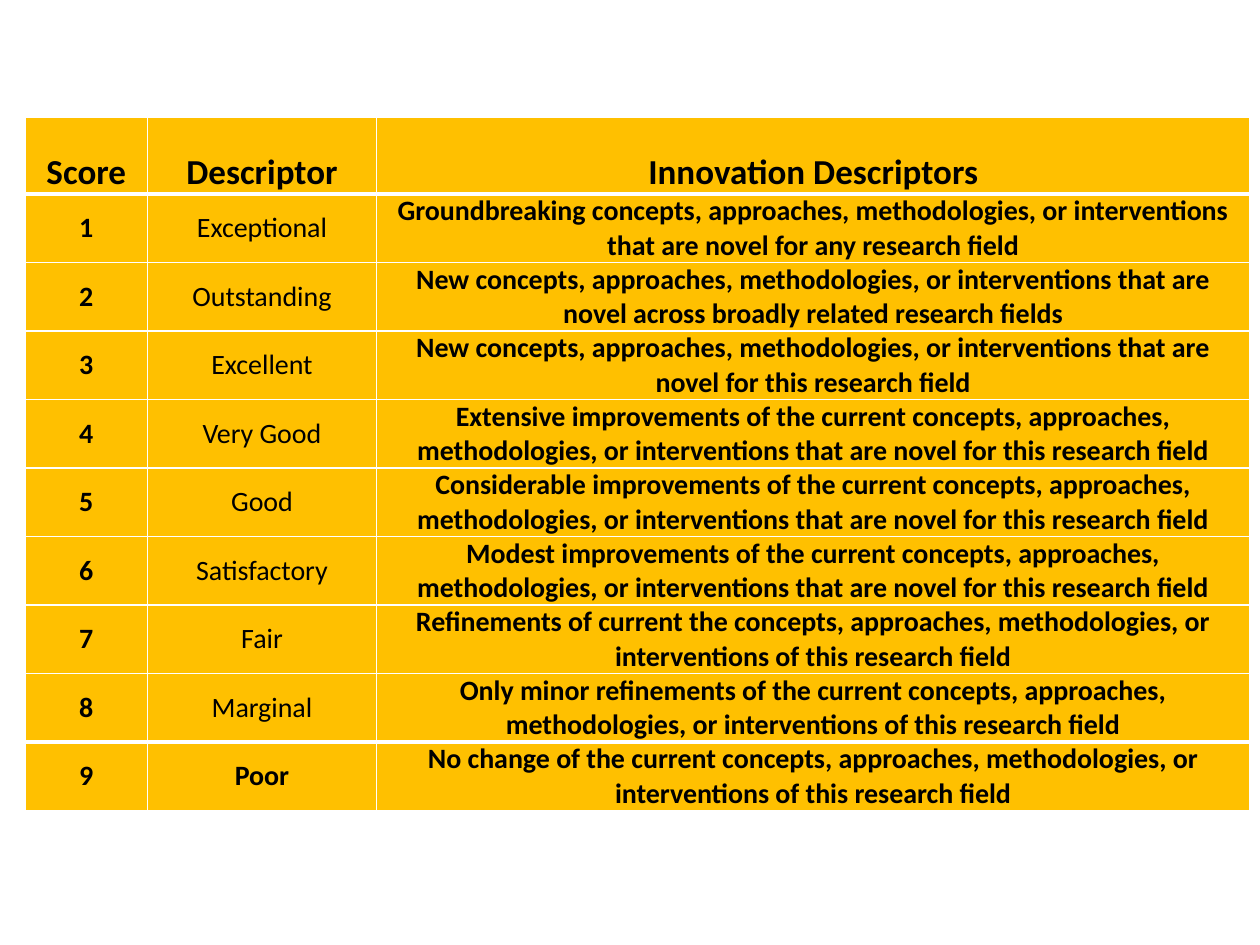
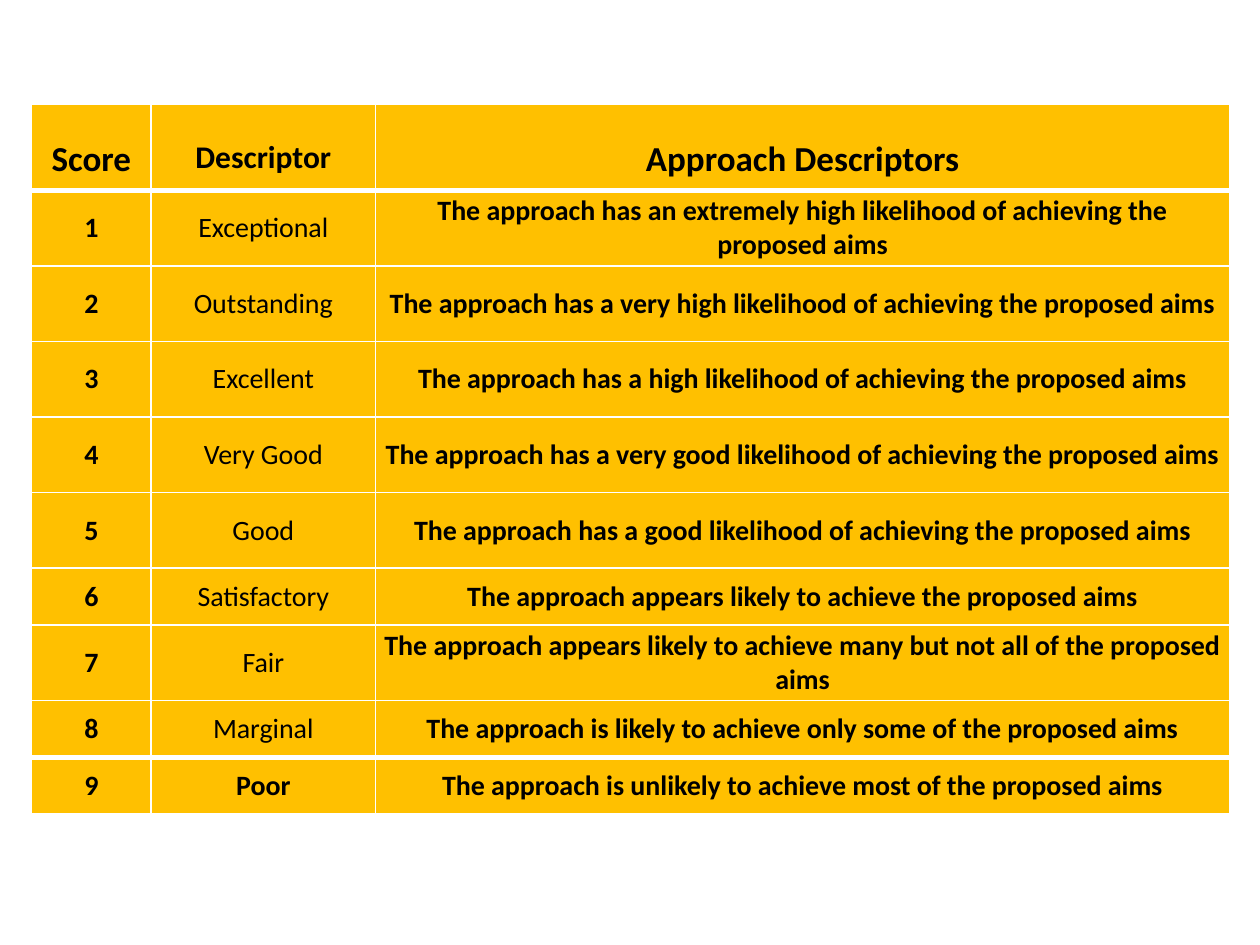
from dataclasses import dataclass

from lxml.etree import SubElement
from pptx import Presentation
from pptx.dml.color import RGBColor
from pptx.enum.text import MSO_ANCHOR, PP_ALIGN
from pptx.oxml.ns import qn
from pptx.util import Inches, Pt


@dataclass(frozen=True)
class Theme:
    font: str = "Calibri"
    text: str = "000000"
    cell: str = "FFC000"
    rule: str = "FFFFFF"
    heading_size: int = 20
    small_heading_size: int = 18
    body_size: int = 16
    thin_rule: int = 1
    thick_rule: int = 3
    side_margin: float = 0.07
    heading_top_margin: float = 0.27


THEME = Theme()
BLANK_LAYOUT = 6

RATINGS = ["Exceptional", "Outstanding", "Excellent", "Very Good", "Good",
           "Satisfactory", "Fair", "Marginal", "Poor"]

INNOVATION = [
    "Groundbreaking concepts, approaches, methodologies, or interventions that are novel for any research field",
    "New concepts, approaches, methodologies, or interventions that are novel across broadly related research fields",
    "New concepts, approaches, methodologies, or interventions that are novel for this research field",
    "Extensive improvements of the current concepts, approaches, methodologies, or interventions that are novel for this research field",
    "Considerable improvements of the current concepts, approaches, methodologies, or interventions that are novel for this research field",
    "Modest improvements of the current concepts, approaches, methodologies, or interventions that are novel for this research field",
    "Refinements of current the concepts, approaches, methodologies, or interventions of this research field",
    "Only minor refinements of the current concepts, approaches, methodologies, or interventions of this research field",
    "No change of the current concepts, approaches, methodologies, or interventions of this research field",
]

APPROACH = [
    "The approach has an extremely high likelihood of achieving the proposed aims",
    "The approach has a very high likelihood of achieving the proposed aims",
    "The approach has a high likelihood of achieving the proposed aims",
    "The approach has a very good likelihood of achieving the proposed aims",
    "The approach has a good likelihood of achieving the proposed aims",
    "The approach appears likely to achieve the proposed aims",
    "The approach appears likely to achieve many but not all of the proposed aims",
    "The approach is likely to achieve only some of the proposed aims",
    "The approach is unlikely to achieve most of the proposed aims",
]


def set_borders(cell, widths):
    """Draw the cell's rules; widths maps each side (L, R, T, B) to points."""
    properties = cell._tc.get_or_add_tcPr()
    for position, side in enumerate("LRTB"):
        line = SubElement(properties, qn(f"a:ln{side}"), w=str(Pt(widths[side])))
        fill = SubElement(line, qn("a:solidFill"))
        SubElement(fill, qn("a:srgbClr"), val=THEME.rule)
        properties.insert(position, line)


def style_cell(cell, text, size, bold, heading):
    """Fill a cell and write its centred text."""
    cell.fill.solid()
    cell.fill.fore_color.rgb = RGBColor.from_string(THEME.cell)
    layout = {
        "margin_left": Inches(THEME.side_margin),
        "margin_right": Inches(THEME.side_margin),
        "margin_top": Inches(THEME.heading_top_margin if heading else 0),
        "margin_bottom": 0,
        "vertical_anchor": MSO_ANCHOR.TOP if heading else MSO_ANCHOR.MIDDLE,
    }
    for name, value in layout.items():
        setattr(cell, name, value)

    paragraph = cell.text_frame.paragraphs[0]
    paragraph.alignment = PP_ALIGN.CENTER
    run = paragraph.add_run()
    run.text = text
    for name, value in {"name": THEME.font, "size": Pt(size), "bold": bold}.items():
        setattr(run.font, name, value)
    run.font.color.rgb = RGBColor.from_string(THEME.text)


def add_score_table(slide, box, column_widths, row_heights, headings, heading_sizes, descriptions):
    """Place a scoring table in box (left, top, width, height)."""
    scores = [(str(score), rating, description) for score, (rating, description)
              in enumerate(zip(RATINGS, descriptions), start=1)]
    rows = [headings, *scores]
    last = len(rows) - 1
    frame = slide.shapes.add_table(len(rows), len(headings), *map(Inches, box))
    table = frame.table
    table.horz_banding = False

    for column, width in zip(table.columns, column_widths):
        column.width = Inches(width)
    for row, height in zip(table.rows, row_heights):
        row.height = Inches(height)
    frame.height = Inches(box[3])

    # Thick rules set off the heading row and the lowest score
    thick_edges = {1, last}
    for row_index, texts in enumerate(rows):
        heading = row_index == 0
        edges = [THEME.thick_rule if edge in thick_edges else THEME.thin_rule
                 for edge in (row_index, row_index + 1)]
        for column_index, text in enumerate(texts):
            cell = table.cell(row_index, column_index)
            size = heading_sizes[column_index] if heading else THEME.body_size
            bold = column_index != 1 or row_index in (0, last)
            style_cell(cell, text, size, bold, heading)
            set_borders(cell, {"L": THEME.thin_rule, "R": THEME.thin_rule,
                               "T": edges[0], "B": edges[1]})


def main():
    presentation = Presentation()
    presentation.slide_width = Inches(10)
    presentation.slide_height = Inches(7.5)
    large, small = THEME.heading_size, THEME.small_heading_size

    tables = [
        # Innovation scores
        dict(box=(0.2, 0.93, 9.71, 5.4), column_widths=(0.97, 1.82, 6.93),
             row_heights=[0.48] * 10,
             headings=("Score", "Descriptor", "Innovation Descriptors"),
             heading_sizes=(large, large, large), descriptions=INNOVATION),
        # Approach scores
        dict(box=(0.25, 0.83, 9.5, 5.67), column_widths=(0.95, 1.78, 6.78),
             row_heights=[0.68] + [0.6] * 5 + [0.45, 0.6, 0.45, 0.45],
             headings=("Score", "Descriptor", "Approach Descriptors"),
             heading_sizes=(large, small, large), descriptions=APPROACH),
    ]
    for table in tables:
        slide = presentation.slides.add_slide(presentation.slide_layouts[BLANK_LAYOUT])
        add_score_table(slide, **table)

    presentation.save("out.pptx")


if __name__ == "__main__":
    main()
